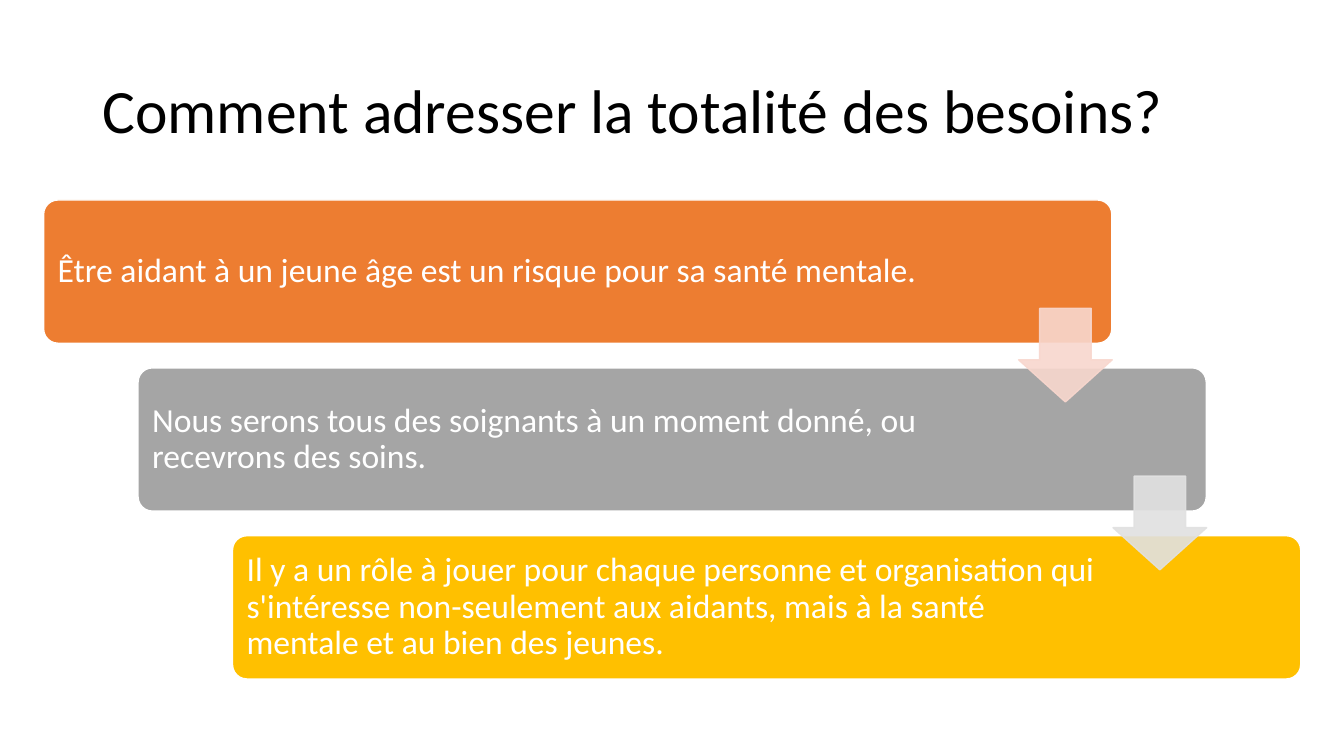
from lxml import etree
from pptx import Presentation
from pptx.dml.color import RGBColor
from pptx.enum import shapes, text
from pptx.oxml import ns
from pptx.util import Cm, Pt

BLACK = RGBColor(0x00, 0x00, 0x00)
WHITE = RGBColor(0xFF, 0xFF, 0xFF)
ORANGE = RGBColor(0xED, 0x7D, 0x31)
GREY = RGBColor(0xA5, 0xA5, 0xA5)
GOLD = RGBColor(0xFF, 0xC0, 0x00)
PALE_ORANGE = RGBColor(0xF8, 0xD7, 0xCE)
PALE_GREY = RGBColor(0xE1, 0xE1, 0xE1)

TITLE = "Comment adresser la totalité des besoins?"
STEPS = [
    ("Être aidant à un jeune âge est un risque pour sa santé mentale.", ORANGE, Cm(3.96)),
    ("Nous serons tous des soignants à un moment donné, ou recevrons des soins.", GREY, Cm(4.97)),
    ("Il y a un rôle à jouer pour chaque personne et organisation qui s'intéresse "
     "non-seulement aux aidants, mais à la santé mentale et au bien des jeunes.", GOLD, Cm(4.97)),
]
ARROW_COLOURS = [PALE_ORANGE, PALE_GREY]

CARD_LEFT, CARD_TOP, CARD_WIDTH, CARD_HEIGHT = Cm(1.1), Cm(5.04), Cm(26.92), Cm(3.61)
ARROW_LEFT, ARROW_TOP, ARROW_SIZE = Cm(25.67), Cm(7.77), Cm(2.36)
SHIFT_RIGHT, SHIFT_DOWN = Cm(2.38), Cm(4.23)
INSET = Cm(0.25)


def format_text(para, size, colour):
    para.alignment = text.PP_ALIGN.LEFT
    para.line_spacing = 0.9
    para.font.name = "Calibri"
    para.font.size = Pt(size)
    para.font.color.rgb = colour


def add_block(page, kind, place, adjustments, fill, line):
    block = page.shapes.add_shape(kind, *place)
    block.shadow.inherit = False
    for index, value in enumerate(adjustments):
        block.adjustments[index] = value
    block.fill.solid()
    block.fill.fore_color.rgb = fill
    block.line.color.rgb = line
    block.line.width = Pt(1)
    return block


def add_card(page, index, wording, colour, right_inset):
    place = (CARD_LEFT + index * SHIFT_RIGHT, CARD_TOP + index * SHIFT_DOWN, CARD_WIDTH, CARD_HEIGHT)
    card = add_block(page, shapes.MSO_SHAPE.ROUNDED_RECTANGLE, place, [0.1], colour, WHITE)
    frame = card.text_frame
    frame.word_wrap = True
    frame.vertical_anchor = text.MSO_ANCHOR.MIDDLE
    frame.margin_left = frame.margin_top = frame.margin_bottom = INSET
    frame.margin_right = right_inset
    frame.text = wording
    format_text(frame.paragraphs[0], 24, WHITE)


def add_arrow(page, index, colour):
    place = (ARROW_LEFT + index * SHIFT_RIGHT, ARROW_TOP + index * SHIFT_DOWN, ARROW_SIZE, ARROW_SIZE)
    arrow = add_block(page, shapes.MSO_SHAPE.DOWN_ARROW, place, [0.55, 0.45], colour, colour)
    for tone in arrow._element.spPr.iter(ns.qn("a:srgbClr")):
        etree.SubElement(tone, ns.qn("a:alpha"), val="90000")


def main():
    deck = Presentation()
    deck.slide_width, deck.slide_height = Cm(33.87), Cm(19.05)
    page = deck.slides.add_slide(deck.slide_layouts[5])

    title = page.shapes.title
    title.left, title.top, title.width, title.height = Cm(2.33), Cm(1.01), Cm(29.21), Cm(3.68)
    title.text_frame.text = TITLE
    title.text_frame.vertical_anchor = text.MSO_ANCHOR.MIDDLE
    format_text(title.text_frame.paragraphs[0], 44, BLACK)

    for index, step in enumerate(STEPS):
        add_card(page, index, *step)
    for index, colour in enumerate(ARROW_COLOURS):
        add_arrow(page, index, colour)
    deck.save("out.pptx")


if __name__ == "__main__":
    main()
